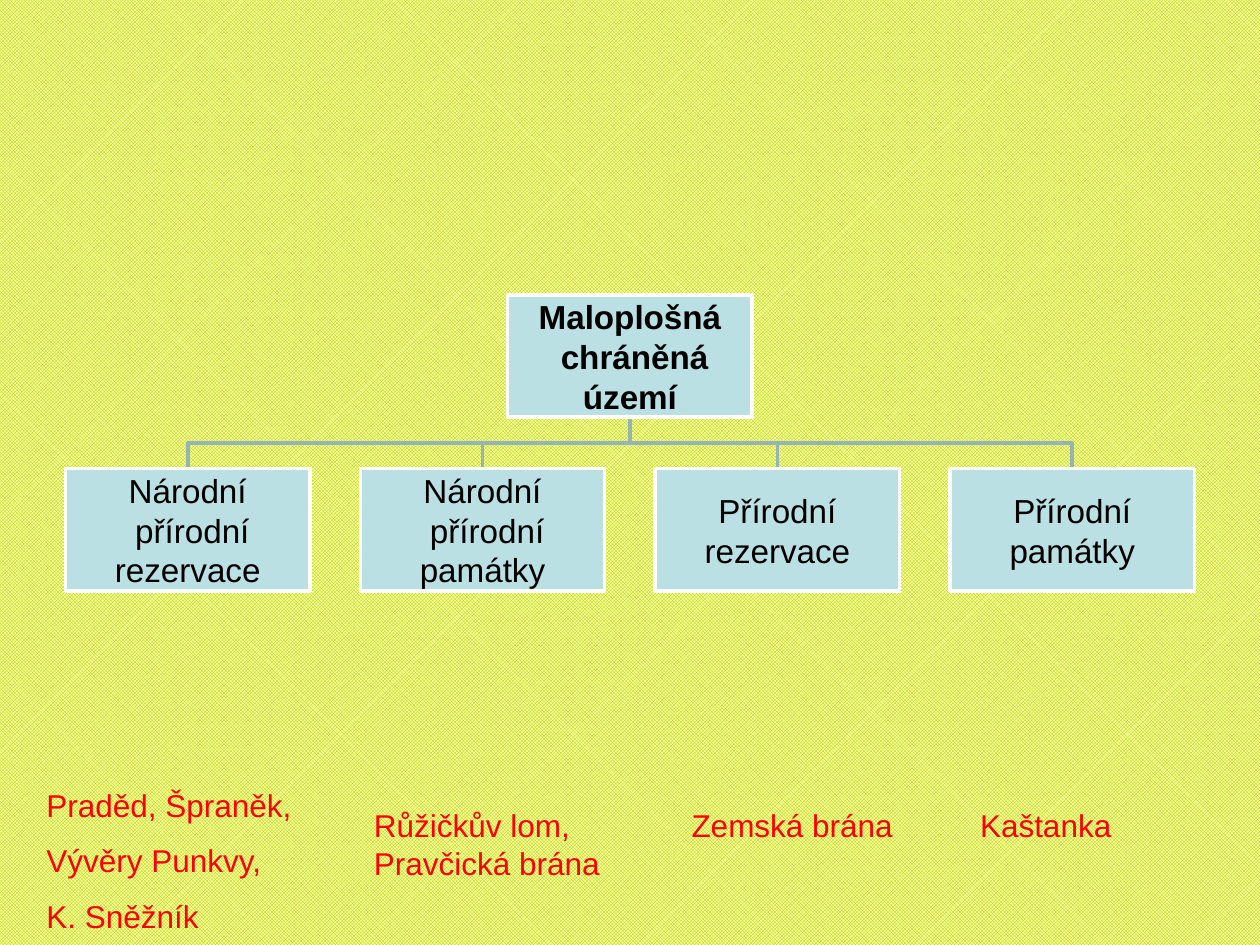
from pptx import Presentation
from pptx.dml.color import RGBColor
from pptx.enum.dml import MSO_PATTERN
from pptx.enum.shapes import MSO_SHAPE
from pptx.enum.text import MSO_ANCHOR as Anchor, PP_ALIGN as Align
from pptx.util import Inches, Pt


def color(value):
    return RGBColor.from_string(value)


def write(holder, lines, frame_format, paragraph_format, font_format, ink):
    frame = holder.text_frame
    frame.text = "\n".join(lines)
    for name, value in frame_format.items():
        setattr(frame, name, value)
    for paragraph in frame.paragraphs:
        for name, value in paragraph_format.items():
            setattr(paragraph, name, value)
        for name, value in font_format.items():
            setattr(paragraph.font, name, value)
        paragraph.font.color.rgb = color(ink)


deck = Presentation()
deck.slide_width, deck.slide_height = Inches(10), Inches(7.5)
slide = deck.slides.add_slide(deck.slide_layouts[6])
shapes = slide.shapes

backdrop = slide.background.fill
backdrop.patterned()
backdrop.pattern = MSO_PATTERN.SMALL_CHECKER_BOARD
backdrop.fore_color.rgb = color("99CC00")
backdrop.back_color.rgb = color("FFFF99")

box_width, box_height = Inches(1.94), Inches(0.97)
column_pitch = Inches(2.34)
root_top, branch_top = Inches(2.34), Inches(3.72)
root_bottom = root_top + box_height
fork = (root_bottom + branch_top) // 2
middle = deck.slide_width // 2

branches = [
    ["Národní", " přírodní rezervace"],
    ["Národní", " přírodní památky"],
    ["Přírodní rezervace"],
    ["Přírodní památky"],
]
branch_centers = [
    int(middle + (column - (len(branches) - 1) / 2) * column_pitch)
    for column in range(len(branches))
]

for center in reversed(branch_centers):
    builder = shapes.build_freeform(middle, root_bottom)
    builder.add_line_segments(
        [(middle, fork), (center, fork), (center, branch_top)], close=False
    )
    branch_line = builder.convert_to_shape()
    branch_line.shadow.inherit = False
    branch_line.fill.background()
    branch_line.line.color.rgb = color("96B3B6")
    branch_line.line.width = Pt(2)

tight = Inches(0.01)
box_frame = {
    "word_wrap": True,
    "vertical_anchor": Anchor.MIDDLE,
    "margin_left": tight,
    "margin_right": tight,
    "margin_top": tight,
    "margin_bottom": tight,
}
nodes = [(middle, root_top, ["Maloplošná", " chráněná území"], True)]
nodes += [
    (center, branch_top, lines, False)
    for center, lines in zip(branch_centers, branches)
]
for center, top, lines, bold in nodes:
    node = shapes.add_shape(
        MSO_SHAPE.RECTANGLE, center - box_width // 2, top, box_width, box_height
    )
    node.shadow.inherit = False
    node.fill.solid()
    node.fill.fore_color.rgb = color("BBE0E3")
    node.line.color.rgb = color("FFFFFF")
    node.line.width = Pt(2)
    node_font = {"name": "Arial", "size": Pt(19), "bold": bold}
    write(node, lines, box_frame, {"alignment": Align.CENTER}, node_font, "000000")

examples = [
    (0.27, 6.19, 2.21, 1.31, ["Praděd, Špraněk,", "Vývěry Punkvy,", "K. Sněžník"]),
    (2.87, 6.35, 2.13, 0.71, ["Růžičkův lom, Pravčická brána"]),
    (5.39, 6.35, 1.89, 0.4, ["Zemská brána"]),
    (7.68, 6.35, 1.73, 0.4, ["Kaštanka"]),
]
example_font = {"name": "Arial", "size": Pt(18)}
for *place, lines in examples:
    example = shapes.add_textbox(*map(Inches, place))
    write(
        example, lines, {"word_wrap": True}, {"space_after": Pt(10)},
        example_font, "FF0000",
    )

deck.save("out.pptx")
